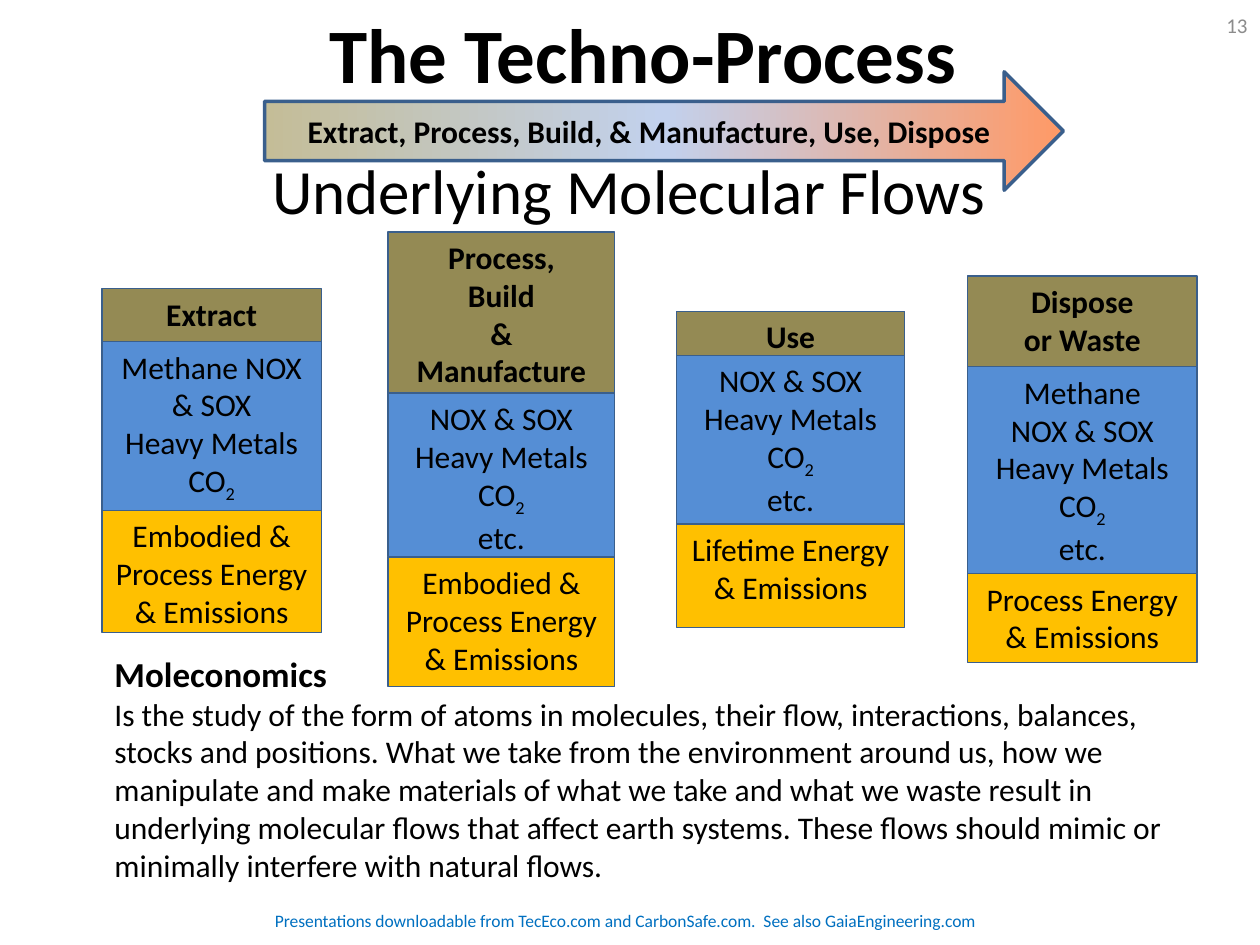
"""Build the Techno-Process slide with its molecular flow columns."""
from copy import deepcopy
from itertools import pairwise

from pptx import Presentation
from pptx import util as u
from pptx.dml.color import RGBColor
from pptx.enum import shapes, text
from pptx.oxml.ns import qn

BLACK = RGBColor(0, 0, 0)
GREY = RGBColor(0x8C, 0x8C, 0x8C)
LINK_BLUE = RGBColor(0x00, 0x70, 0xC0)
OUTLINE = RGBColor(0x3A, 0x5F, 0x8C)
OLIVE = RGBColor(0x94, 0x8A, 0x54)
FLOW_BLUE = RGBColor(0x55, 0x8E, 0xD5)
AMBER = RGBColor(0xFF, 0xC0, 0x00)
GRADIENT = [
    (0, RGBColor(0xC4, 0xBD, 0x97)),
    (0.5, RGBColor(0xC2, 0xD1, 0xED)),
    (1, RGBColor(0xFF, 0x99, 0x66)),
]

TITLE = "The Techno-Process"
STAGES = "Extract, Process, Build, & Manufacture, Use, Dispose"
SUBTITLE = "Underlying Molecular Flows"
FOOTER = "Presentations downloadable from TecEco.com and CarbonSafe.com.  See also GaiaEngineering.com"
MOLECONOMICS = (
    "Is the study of the form of atoms in molecules, their flow, interactions, balances, stocks "
    "and positions. What we take from the environment around us, how we manipulate and make "
    "materials of what we take and what we waste result in underlying molecular flows that affect "
    "earth systems. These flows should mimic or minimally interfere with natural flows."
)
EMBODIED = ["Embodied & Process Energy & Emissions"]
COMMON_FLOWS = ["NOX & SOX", "Heavy Metals", "CO₂", "etc."]

# left, width, horizontal edges, then heading, flows and energy
COLUMNS = [
    (0.81, 1.74, (2.29, 2.71, 4.05, 5.02),
     ["Extract"], ["Methane NOX & SOX", "Heavy Metals", "CO₂"], EMBODIED),
    (3.08, 1.80, (1.84, 3.12, 4.42, 5.45),
     ["Process,", "Build", "&", "Manufacture"], COMMON_FLOWS, EMBODIED),
    (5.37, 1.81, (2.47, 2.82, 4.16, 4.98),
     ["Use"], COMMON_FLOWS, ["Lifetime Energy & Emissions"]),
    (7.68, 1.82, (2.19, 2.91, 4.55, 5.26),
     ["Dispose", "or Waste"], ["Methane", *COMMON_FLOWS], ["Process Energy & Emissions"]),
]
LAYERS = [(OLIVE, True), (FLOW_BLUE, False), (AMBER, False)]


def write(shape, lines, anchor=text.MSO_ANCHOR.MIDDLE, align=text.PP_ALIGN.CENTER, wrap=True, **font):
    frame = shape.text_frame
    frame.word_wrap = wrap
    frame.vertical_anchor = anchor
    for index, line in enumerate(lines):
        paragraph = frame.paragraphs[0] if index == 0 else frame.add_paragraph()
        paragraph.alignment = align
        base, subscript, _ = line.partition("₂")
        for content in filter(None, (base, subscript and "2")):
            run = paragraph.add_run()
            run.text = content
            style = {"name": "Calibri", "size": u.Pt(18), "bold": False} | font
            run.font.color.rgb = style.pop("color", BLACK)
            for name, value in style.items():
                setattr(run.font, name, value)
        if subscript:
            run.font._element.set("baseline", "-25000")
    return frame


def add_box(slide, kind, bounds, line_width):
    shape = slide.shapes.add_shape(kind, *map(u.Inches, bounds))
    shape.shadow.inherit = False
    shape.line.color.rgb = OUTLINE
    shape.line.width = u.Pt(line_width)
    return shape


def add_text(slide, bounds, lines, **style):
    return write(slide.shapes.add_textbox(*map(u.Inches, bounds)), lines, **style)


def add_arrow(slide):
    arrow = add_box(slide, shapes.MSO_SHAPE.RIGHT_ARROW, (2.1, 0.57, 6.34, 0.94), 2)
    arrow.fill.gradient()
    arrow.fill.gradient_angle = 0
    first = next(arrow._element.iter(qn("a:gs")))
    first.addnext(deepcopy(first))
    for stop, (position, color) in zip(arrow.fill.gradient_stops, GRADIENT):
        stop.position = position
        stop.color.rgb = color
    write(arrow, [STAGES], bold=True)


def add_column(slide, left, width, edges, *contents):
    for (top, bottom), lines, (color, heading) in zip(pairwise(edges), contents, LAYERS):
        box = add_box(slide, shapes.MSO_SHAPE.RECTANGLE, (left, top, width, bottom - top), 0.75)
        box.fill.solid()
        box.fill.fore_color.rgb = color
        write(box, lines, text.MSO_ANCHOR.TOP, wrap=not heading, bold=heading)


def main():
    presentation = Presentation()
    presentation.slide_width, presentation.slide_height = u.Inches(10), u.Inches(7.5)
    slide = presentation.slides.add_slide(presentation.slide_layouts[5])
    title = slide.shapes.title
    title.left, title.top, title.width, title.height = map(u.Inches, (0.54, 0, 9.13, 0.84))
    write(title, [TITLE], size=u.Pt(44), bold=True)
    add_text(slide, (7.67, 0, 2.33, 0.4), ["13"], align=text.PP_ALIGN.RIGHT, size=u.Pt(12), color=GREY)
    add_arrow(slide)
    add_text(slide, (1.95, 1.28, 6.08, 0.45), [SUBTITLE], size=u.Pt(36))
    for column in COLUMNS:
        add_column(slide, *column)
    frame = add_text(slide, (0.81, 5.13, 8.98, 1.95), ["Moleconomics", MOLECONOMICS],
                     anchor=text.MSO_ANCHOR.TOP, align=text.PP_ALIGN.LEFT)
    heading = frame.paragraphs[0].runs[0].font
    heading.size, heading.bold = u.Pt(20), True
    add_text(slide, (1.85, 7.16, 6.22, 0.29), [FOOTER], size=u.Pt(10), color=LINK_BLUE)
    presentation.save("out.pptx")


if __name__ == "__main__":
    main()
